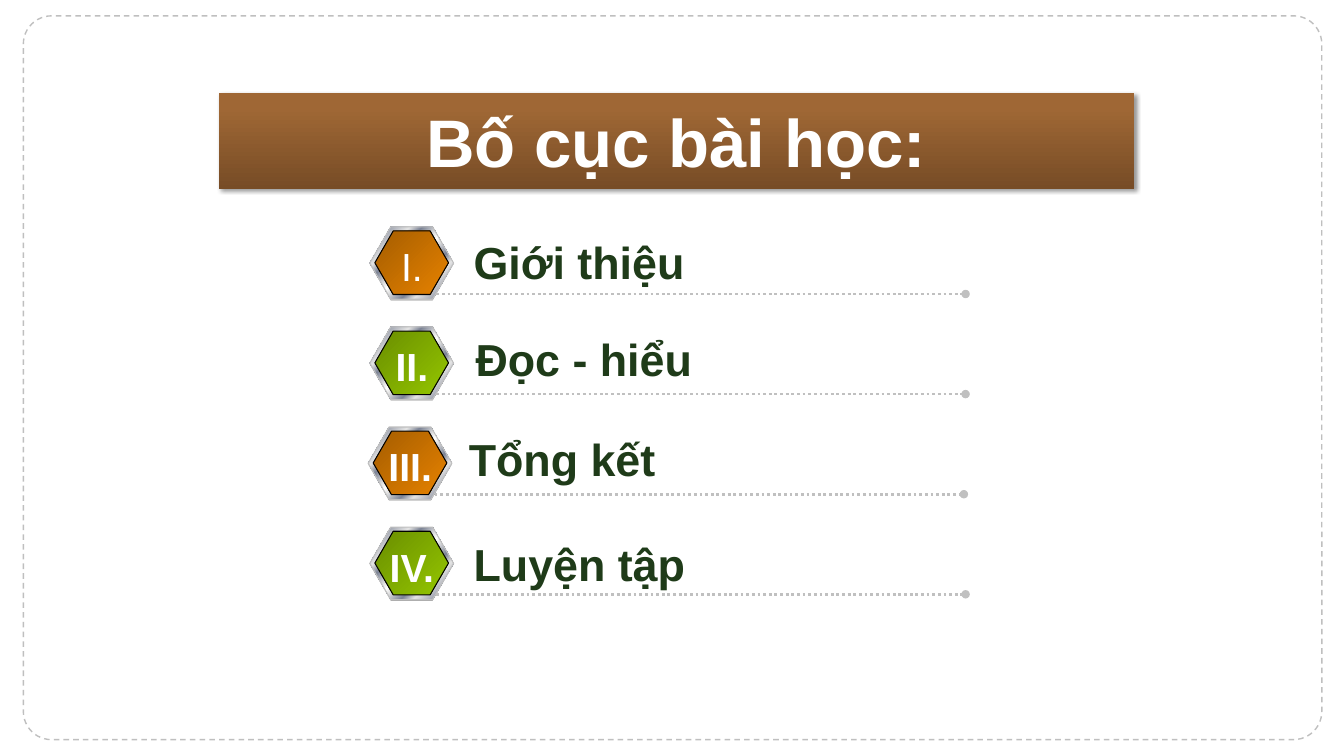
from pptx import Presentation
from pptx.dml.color import RGBColor
from pptx.enum.dml import MSO_LINE
from pptx.enum.shapes import MSO_CONNECTOR, MSO_SHAPE as SHAPE
from pptx.enum.text import MSO_ANCHOR, MSO_AUTO_SIZE as FIT, PP_ALIGN
from pptx.oxml.ns import qn
from pptx.util import Pt
from lxml.etree import SubElement

WHITE = RGBColor(0xFF, 0xFF, 0xFF)
BLACK = RGBColor(0, 0, 0)
GREY = RGBColor(0x80, 0x80, 0x80)
SILVER = RGBColor(0xC0, 0xC0, 0xC0)
FRAME_GREY = RGBColor(0xBF, 0xBF, 0xBF)
LIGHT = RGBColor(0xE6, 0xE6, 0xE6)
STEEL = RGBColor(0x7D, 0x84, 0x96)
INK = RGBColor(0x1F, 0x3B, 0x19)

BROWN = [(0, RGBColor(0x9F, 0x67, 0x35)), (20, RGBColor(0x9D, 0x66, 0x34)),
         (100, RGBColor(0x77, 0x4C, 0x26))]
ORANGE = [(0, RGBColor(0xA5, 0x5D, 0)), (100, RGBColor(0xE6, 0x82, 0))]
GREEN = [(0, RGBColor(0x6A, 0x8E, 0)), (100, RGBColor(0x94, 0xC6, 0))]
CHROME = [(0, LIGHT), (7, STEEL), (26, LIGHT), (34, STEEL), (46, LIGHT), (50, WHITE),
          (54, LIGHT), (66, STEEL), (74, LIGHT), (93, STEEL), (100, LIGHT)]

ROWS = [
    ("I.", False, "Giới thiệu", ORANGE, 264.2, (67, 2.2, 166.3)),
    ("II.", True, "Đọc - hiểu", GREEN, 264.2, (68.4, 0, 170.6)),
    ("III.", True, "Tổng kết", ORANGE, 263, (64.8, 0, 149)),
    ("IV.", True, "Luyện tập", GREEN, 264.2, (67, 3.6, 167)),
]
ROW_TOP, ROW_PITCH = 162, 71.5


def set_gradient(sp, stops, angle):
    """Fill a shape with gradient stops, the angle running counter-clockwise."""
    sp.fill.gradient()
    sp.fill.gradient_angle = angle
    stop_list = sp._element.spPr.find(qn("a:gradFill")).find(qn("a:gsLst"))
    for stop in list(stop_list):
        stop_list.remove(stop)
    for position, color in stops:
        stop = SubElement(stop_list, qn("a:gs"), pos=str(position * 1000))
        SubElement(stop, qn("a:srgbClr"), val=str(color))


def add_run(p, text, size, color, bold):
    """Add one formatted run to a paragraph."""
    r = p.add_run()
    r.text = text
    r.font.name, r.font.size, r.font.bold = "Arial", Pt(size), bold
    r.font.color.rgb = color


def add_label(shapes, text, x, y, w, h, size, color, bold, align):
    """Add a one-line text box that does not wrap."""
    tf = shapes.add_textbox(Pt(x), Pt(y), Pt(w), Pt(h)).text_frame
    tf.word_wrap = False
    tf.auto_size = FIT.SHAPE_TO_FIT_TEXT
    tf.paragraphs[0].alignment = align
    add_run(tf.paragraphs[0], text, size, color, bold)


def add_hexagon(shapes, x, y, w, h, line=None):
    """Add a hexagon with an optional thin outline."""
    sp = shapes.add_shape(SHAPE.HEXAGON, Pt(x), Pt(y), Pt(w), Pt(h))
    sp.shadow.inherit = False
    sp.adjustments[0] = 0.289
    if line is None:
        sp.line.fill.background()
    else:
        sp.line.color.rgb, sp.line.width = line, Pt(0.75)
    return sp


def add_frame(s, x, y, w, h):
    """Add the dashed rounded border."""
    sp = s.shapes.add_shape(SHAPE.ROUNDED_RECTANGLE, Pt(x), Pt(y), Pt(w), Pt(h))
    sp.shadow.inherit = False
    sp.adjustments[0] = 0.039
    sp.fill.background()
    sp.line.color.rgb, sp.line.width = FRAME_GREY, Pt(1)
    sp.line.dash_style = MSO_LINE.DASH


def add_title(s, text, x, y, w, h):
    """Place the title as a brown banner with a soft shadow."""
    sp = s.shapes.title
    sp.left, sp.top, sp.width, sp.height = Pt(x), Pt(y), Pt(w), Pt(h)
    set_gradient(sp, BROWN, 270)
    effects = SubElement(sp._element.spPr, qn("a:effectLst"))
    shadow = SubElement(effects, qn("a:outerShdw"), blurRad="40000", dist="23000",
                        dir="2700000", rotWithShape="0")
    color = SubElement(shadow, qn("a:srgbClr"), val=str(BLACK))
    SubElement(color, qn("a:alpha"), val="40000")
    tf = sp.text_frame
    tf.auto_size, tf.vertical_anchor = FIT.NONE, MSO_ANCHOR.MIDDLE
    p = tf.paragraphs[0]
    p.alignment = PP_ALIGN.CENTER
    add_run(p, text, 48, WHITE, True)


def add_rule(shapes, x, y, w):
    """Add a dotted line that ends in a dot."""
    rule = shapes.add_connector(MSO_CONNECTOR.STRAIGHT, Pt(x), Pt(y), Pt(x + w), Pt(y))
    rule.line.color.rgb, rule.line.width = SILVER, Pt(2)
    rule.line.dash_style = MSO_LINE.ROUND_DOT
    SubElement(rule.line._get_or_add_ln(), qn("a:tailEnd"), type="oval")
    SubElement(rule._element.spPr, qn("a:effectLst"))


def add_row(s, x, y, numeral, bold, text, stops, label):
    """Add one lesson part: badge, numeral, dotted rule and label."""
    shapes = s.shapes.add_group_shape().shapes
    base = add_hexagon(shapes, x, y + 0.7, 59.8, 51.8)
    base.fill.solid()
    base.fill.fore_color.rgb = GREY
    set_gradient(add_hexagon(shapes, x, y, 59.8, 51.8, SILVER), CHROME, 315)
    set_gradient(add_hexagon(shapes, x + 3.6, y + 3, 52.6, 45.4, BLACK), stops, 315)
    add_rule(shapes, x + 47.5, y + 48, 378)
    dx, dy, w = label
    add_label(shapes, text, x + dx, y + dy, w, 46, 32, INK, True, PP_ALIGN.LEFT)
    add_label(shapes, numeral, x + 7, y + 7.7, 46, 41, 28, WHITE, bold, PP_ALIGN.CENTER)


def main():
    """Build the lesson outline slide."""
    prs = Presentation()
    prs.slide_width, prs.slide_height = Pt(960), Pt(540)
    s = prs.slides.add_slide(prs.slide_layouts[5])
    add_frame(s, 16.7, 11.3, 927.5, 517)
    add_title(s, "Bố cục bài học:", 156.2, 66.2, 653.8, 68.6)
    for i, (numeral, bold, text, stops, x, label) in enumerate(ROWS):
        add_row(s, x, ROW_TOP + i * ROW_PITCH, numeral, bold, text, stops, label)
    prs.save("out.pptx")


if __name__ == "__main__":
    main()
